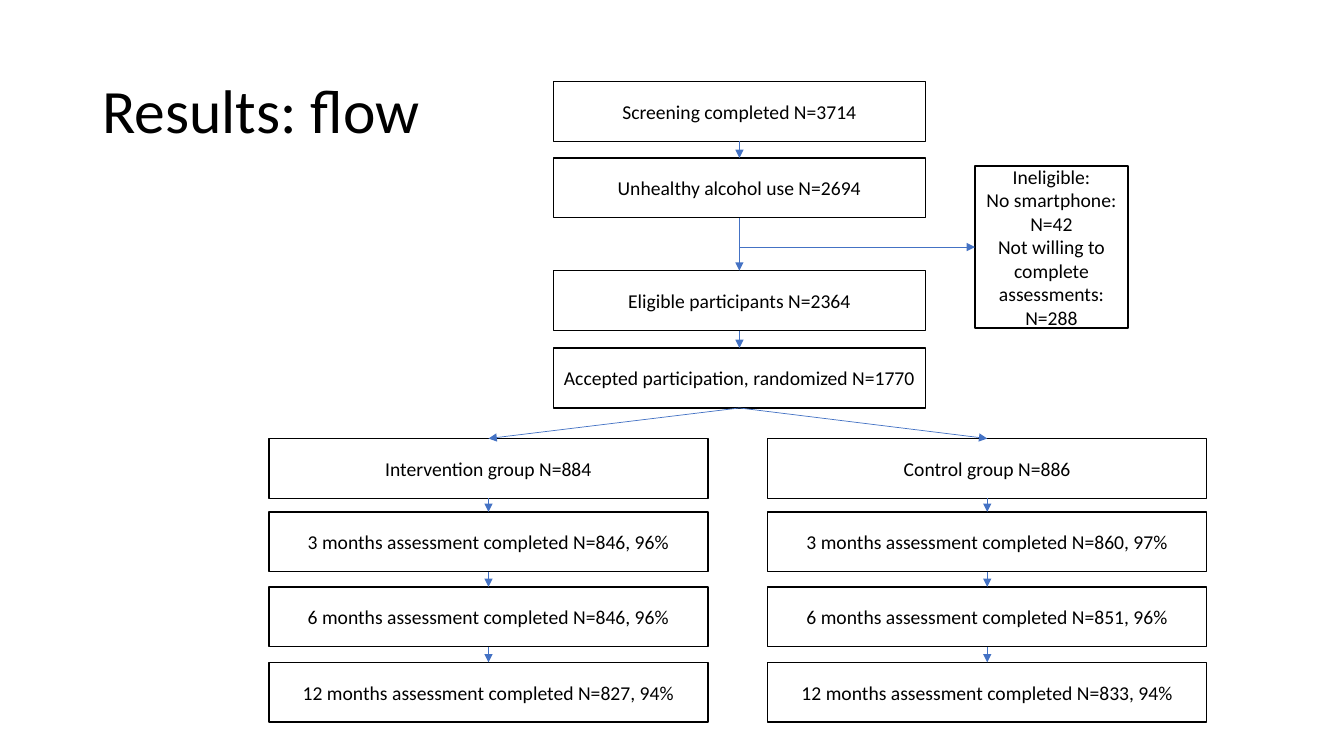
from lxml import etree
from pptx import Presentation
from pptx.dml.color import RGBColor
from pptx.enum.shapes import MSO_CONNECTOR, MSO_SHAPE
from pptx.enum.text import MSO_ANCHOR, PP_ALIGN
from pptx.oxml.ns import qn
from pptx.util import Cm, Pt

RECTANGLE = MSO_SHAPE.RECTANGLE
STRAIGHT = MSO_CONNECTOR.STRAIGHT
MIDDLE = MSO_ANCHOR.MIDDLE
LEFT, CENTER = PP_ALIGN.LEFT, PP_ALIGN.CENTER
TOP_SITE, LEFT_SITE, BOTTOM_SITE = 0, 1, 2

BLACK, BLUE = "000000", "4472C4"
TITLE_FORMAT = {"name": "Calibri", "size": Pt(44)}
BOX_FORMAT = {"name": "Calibri", "size": Pt(14)}
STEP_HEIGHT = 1.51

SCREENING_STEPS = [
    (2.05, "Screening completed N=3714"),
    (3.98, "Unhealthy alcohol use N=2694"),
    (6.82, "Eligible participants N=2364"),
    (8.77, "Accepted participation, randomized N=1770"),
]
INELIGIBLE = ["Ineligible:", "No smartphone: N=42",
              "Not willing to complete assessments: N=288"]
ARM_TOPS = [11.05, 12.9, 14.79, 16.69]
ARMS = [
    (6.78, "Intervention group N=884", ["846, 96%", "846, 96%", "827, 94%"]),
    (19.35, "Control group N=886", ["860, 97%", "851, 96%", "833, 94%"]),
]
MONTHS = [3, 6, 12]


def color(hex_string):
    return RGBColor.from_string(hex_string)


def write_text(shape, lines, text_format, alignment):
    frame = shape.text_frame
    frame.word_wrap = True
    frame.vertical_anchor = MIDDLE
    frame.text = "\n".join(lines)
    for paragraph in frame.paragraphs:
        paragraph.alignment = alignment
        for name, value in text_format.items():
            setattr(paragraph.font, name, value)
        paragraph.font.color.rgb = color(BLACK)


def add_title(slide, box, text):
    title = slide.shapes.add_textbox(*map(Cm, box))
    write_text(title, [text], TITLE_FORMAT, LEFT)
    title.text_frame.paragraphs[0].line_spacing = 0.9


def add_box(slide, box, lines):
    shape = slide.shapes.add_shape(RECTANGLE, *map(Cm, box))
    shape.shadow.inherit = False
    shape.fill.background()
    shape.line.color.rgb = color(BLACK)
    shape.line.width = Pt(1)
    write_text(shape, lines, BOX_FORMAT, CENTER)
    return shape


def add_arrow(slide, target, target_site, source=None, start=(0, 0)):
    """Point at target from the bottom of source, or from a free start."""
    arrow = slide.shapes.add_connector(STRAIGHT, *start, *start)
    if source is not None:
        arrow.begin_connect(source, BOTTOM_SITE)
    arrow.end_connect(target, target_site)
    arrow.line.color.rgb = color(BLUE)
    arrow.line.width = Pt(0.5)
    etree.SubElement(arrow.line._get_or_add_ln(), qn("a:tailEnd"), type="triangle")
    etree.SubElement(arrow._element.spPr, qn("a:effectLst"))


def add_column(slide, left, width, steps):
    """Stack the steps, joined by arrows, and return their boxes."""
    boxes = [add_box(slide, (left, top, width, STEP_HEIGHT), [text])
             for top, text in steps]
    for upper, lower in zip(boxes, boxes[1:]):
        add_arrow(slide, lower, TOP_SITE, source=upper)
    return boxes


def add_exclusion(slide, box, column_box):
    """Branch off sideways from the centre line of the column."""
    side_box = add_box(slide, box, INELIGIBLE)
    start = (column_box.left + column_box.width // 2,
             side_box.top + side_box.height // 2)
    add_arrow(slide, side_box, LEFT_SITE, start=start)


def add_arm(slide, left, width, group, results, randomized):
    texts = [group] + [f"{month} months assessment completed N={result}"
                       for month, result in zip(MONTHS, results)]
    boxes = add_column(slide, left, width, zip(ARM_TOPS, texts))
    add_arrow(slide, boxes[0], TOP_SITE, source=randomized)


def main():
    presentation = Presentation()
    presentation.slide_width, presentation.slide_height = Cm(33.87), Cm(19.05)
    slide = presentation.slides.add_slide(presentation.slide_layouts[6])
    add_title(slide, (2.33, 1.01, 29.21, 3.68), "Results: flow")
    screening = add_column(slide, 13.95, 9.37, SCREENING_STEPS)
    add_exclusion(slide, (24.57, 4.18, 3.86, 4.09), screening[1])
    for left, group, results in ARMS:
        add_arm(slide, left, 11.06, group, results, screening[-1])
    presentation.save("out.pptx")


if __name__ == "__main__":
    main()
